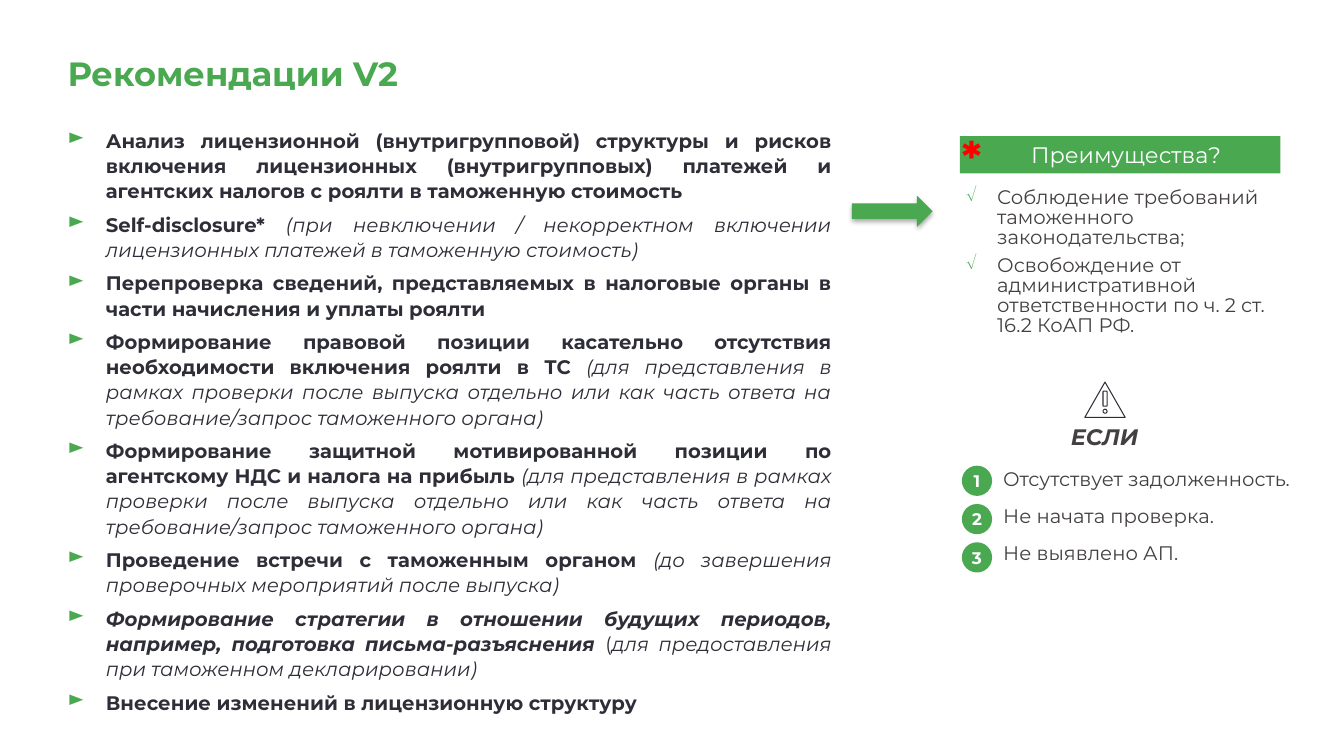
from dataclasses import dataclass

from lxml import etree
from pptx import Presentation
from pptx.dml.color import RGBColor
from pptx.enum.shapes import MSO_SHAPE
from pptx.enum.text import MSO_ANCHOR, PP_ALIGN
from pptx.oxml.ns import qn
from pptx.util import Inches, Pt

LEFT, CENTER, JUSTIFY = PP_ALIGN.LEFT, PP_ALIGN.CENTER, PP_ALIGN.JUSTIFY
TOP, MIDDLE = MSO_ANCHOR.TOP, MSO_ANCHOR.MIDDLE
RECTANGLE, OVAL = MSO_SHAPE.RECTANGLE, MSO_SHAPE.OVAL
ROUNDED, ARROW = MSO_SHAPE.ROUNDED_RECTANGLE, MSO_SHAPE.RIGHT_ARROW


@dataclass(frozen=True)
class Theme:
    font: str = "Montserrat"
    green: str = "4AA851"
    dark: str = "2E2E38"
    grey: str = "444042"
    white: str = "FFFFFF"
    red: str = "FF0000"
    title: int = 24
    heading: int = 16
    body: int = 14
    number: int = 12
    star: int = 32


THEME = Theme()

# Each recommendation is a list of (text, bold, italic) spans.
RECOMMENDATIONS = [
    [("Анализ лицензионной (внутригрупповой) структуры и рисков включения лицензионных "
      "(внутригрупповых) платежей и агентских налогов с роялти в таможенную стоимость", True, False)],
    [("Self-disclosure* ", True, False),
     ("(при невключении / некорректном включении лицензионных платежей "
      "в таможенную стоимость)", False, True)],
    [("Перепроверка сведений, представляемых в налоговые органы в части начисления "
      "и уплаты роялти", True, False)],
    [("Формирование правовой позиции касательно отсутствия необходимости включения "
      "роялти в ТС ", True, False),
     ("(для представления в рамках проверки после выпуска отдельно или как часть ответа "
      "на требование/запрос таможенного органа)", False, True)],
    [("Формирование защитной мотивированной позиции по агентскому НДС "
      "и налога на прибыль ", True, False),
     ("(для представления в рамках проверки после выпуска отдельно или как часть ответа "
      "на требование/запрос таможенного органа)", False, True)],
    [("Проведение встречи с таможенным органом ", True, False),
     ("(до завершения проверочных мероприятий после выпуска)", False, True)],
    [("Формирование стратегии в отношении будущих периодов, например, "
      "подготовка письма-разъяснения ", True, True),
     ("(", False, False),
     ("для предоставления при таможенном декларировании)", False, True)],
    [("Внесение изменений в лицензионную структуру", True, False)],
]
BENEFITS = [
    "Соблюдение требований таможенного законодательства;",
    "Освобождение от административной ответственности по ч. 2 ст. 16.2 КоАП РФ.",
]
CONDITIONS = ["Отсутствует задолженность.", "Не начата проверка.", "Не выявлено АП."]


def color(code):
    return RGBColor.from_string(code)


def add_bullet(para, char, margin, hang, percent=100):
    props = para._p.get_or_add_pPr()
    props.set("marL", str(Inches(margin)))
    props.set("indent", str(-Inches(hang)))
    tint = etree.SubElement(props, qn("a:buClr"))
    etree.SubElement(tint, qn("a:srgbClr"), val=THEME.green)
    etree.SubElement(props, qn("a:buSzPct"), val=str(percent * 1000))
    etree.SubElement(props, qn("a:buChar"), char=char)


def style(para, size, code, bold=None, italic=None, align=LEFT, spacing=None, after=0):
    para.alignment = align
    para.line_spacing = spacing
    para.space_after = Pt(after)
    font = para.font
    font.name, font.size, font.bold, font.italic = THEME.font, Pt(size), bold, italic
    font.color.rgb = color(code)


def prepare_frame(frame, inset_left=0, inset_top=0, anchor=TOP):
    frame.word_wrap = True
    frame.margin_left, frame.margin_top = Inches(inset_left), Inches(inset_top)
    frame.margin_right = frame.margin_bottom = 0
    frame.vertical_anchor = anchor
    return frame


def add_text_frame(page, left, top, width, height, inset_top=0.04):
    box = page.shapes.add_textbox(Inches(left), Inches(top), Inches(width), Inches(height))
    return prepare_frame(box.text_frame, inset_top=inset_top)


def paragraphs(frame, items):
    """Yield each item with its own paragraph of the frame."""
    for index, item in enumerate(items):
        yield item, frame.add_paragraph() if index else frame.paragraphs[0]


def add_line(frame, text, *args, **kwargs):
    para = frame.paragraphs[0]
    para.add_run().text = text
    style(para, *args, **kwargs)


def add_filled(page, kind, left, top, width, height):
    shape = page.shapes.add_shape(kind, Inches(left), Inches(top), Inches(width), Inches(height))
    shape.shadow.inherit = False
    shape.fill.solid()
    shape.fill.fore_color.rgb = color(THEME.green)
    shape.line.fill.background()
    return shape


def add_title(page, left, top, width, height):
    frame = add_text_frame(page, left, top, width, height, inset_top=0)
    add_line(frame, "Рекомендации V2", THEME.title, THEME.green, bold=True, spacing=0.85)


def add_recommendations(page, left, top, width, height):
    frame = add_text_frame(page, left, top, width, height, inset_top=0)
    for spans, para in paragraphs(frame, RECOMMENDATIONS):
        add_bullet(para, "►", 0.38, 0.38, 110)
        for text, bold, italic in spans:
            span = para.add_run()
            span.text = text
            span.font.bold, span.font.italic = bold, italic
        style(para, THEME.body, THEME.dark, align=JUSTIFY, spacing=1.07, after=6)


def add_arrow(page, left, top, width, height):
    arrow = add_filled(page, ARROW, left, top, width, height)
    effects = arrow._element.spPr.find(qn("a:effectLst"))
    shadow = etree.SubElement(effects, qn("a:outerShdw"), blurRad=str(Pt(3.5)),
                              dist=str(Pt(2.2)), dir="5400000", rotWithShape="0")
    tint = etree.SubElement(shadow, qn("a:srgbClr"), val="000000")
    etree.SubElement(tint, qn("a:alpha"), val="32000")


def add_benefits(page, left, top, width, height):
    header = add_filled(page, RECTANGLE, left, top, width, 0.37)
    frame = prepare_frame(header.text_frame, inset_left=0.12, anchor=MIDDLE)
    add_line(frame, "Преимущества?", THEME.heading, THEME.white, align=CENTER)
    star = add_text_frame(page, left + 0.02, top - 0.02, 1.42, 0.5)
    add_line(star, "*", THEME.star, THEME.red, bold=True, spacing=0.85)

    frame = add_text_frame(page, left - 0.05, top + 0.48, width + 0.1, height - 0.48)
    for text, para in paragraphs(frame, BENEFITS):
        add_bullet(para, "√", 0.42, 0.31)
        para.add_run().text = text
        style(para, THEME.body, THEME.grey, spacing=0.85, after=6)


def add_warning(page, left, top, width, height):
    """Draw a triangular warning sign with an exclamation mark."""
    middle = left + width / 2
    builder = page.shapes.build_freeform(Inches(middle), Inches(top), scale=1.0)
    corners = [(left + width, top + height), (left, top + height)]
    builder.add_line_segments([(Inches(x), Inches(y)) for x, y in corners], close=True)
    stroke = add_filled(page, ROUNDED, middle - 0.02, top + 0.09, 0.04, 0.15)
    dot = add_filled(page, OVAL, middle - 0.02, top + 0.27, 0.04, 0.04)
    for part in (builder.convert_to_shape(), stroke, dot):
        part.shadow.inherit = False
        part.fill.background()
        part.line.color.rgb = color(THEME.dark)
        part.line.width = Pt(0.75)
        etree.SubElement(part.line._get_or_add_ln(), qn("a:round"))


def add_conditions(page, left, top, width, height):
    add_warning(page, left + 1.22, top, 0.4, 0.35)
    frame = add_text_frame(page, left + 1.01, top + 0.41, 0.81, 0.27)
    add_line(frame, "ЕСЛИ", THEME.heading, THEME.grey, bold=True, italic=True,
             align=CENTER, spacing=0.85)

    frame = add_text_frame(page, left + 0.41, top + 0.84, width - 0.41, height - 0.84)
    for index, (text, para) in enumerate(paragraphs(frame, CONDITIONS)):
        para.add_run().text = text
        style(para, THEME.body, THEME.grey, spacing=0.85, after=12)
        badge = add_filled(page, OVAL, left, top + 0.83 + 0.38 * index, 0.3, 0.3)
        badge_frame = prepare_frame(badge.text_frame, anchor=MIDDLE)
        add_line(badge_frame, str(index + 1), THEME.number, THEME.white, bold=True, align=CENTER)


def main():
    deck = Presentation()
    deck.slide_width, deck.slide_height = Inches(13.33), Inches(7.5)
    page = deck.slides.add_slide(deck.slide_layouts[6])
    add_title(page, 0.67, 0.59, 12, 0.65)
    add_recommendations(page, 0.67, 1.26, 7.58, 5.41)
    add_arrow(page, 8.45, 1.94, 0.8, 0.31)
    add_benefits(page, 9.52, 1.35, 3.18, 2.01)
    add_conditions(page, 9.54, 3.79, 3.43, 1.89)
    deck.save("out.pptx")


if __name__ == "__main__":
    main()
